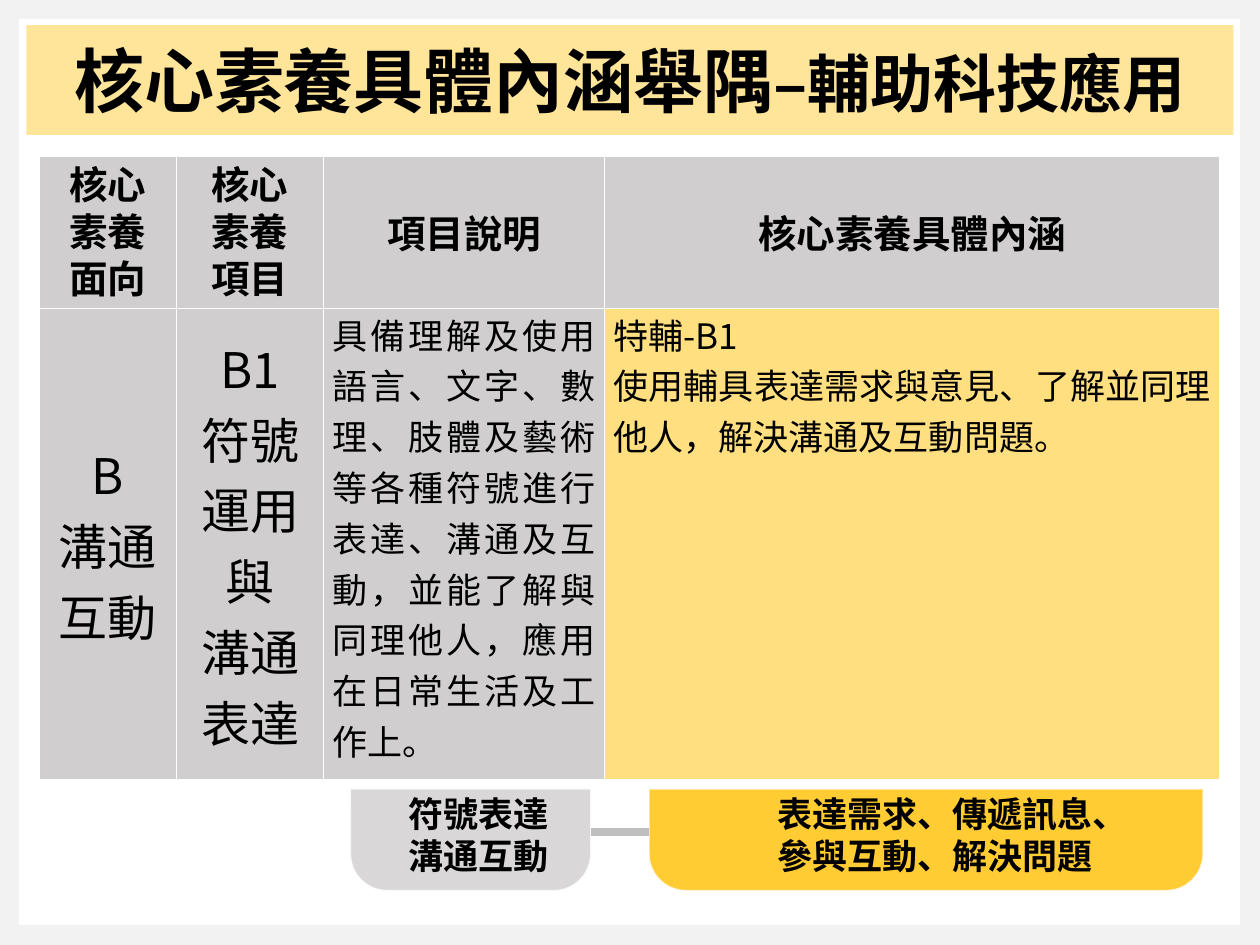
from pptx import Presentation
from pptx.dml.color import RGBColor as RGB
from pptx.enum.shapes import MSO_CONNECTOR as Link, MSO_SHAPE as Form
from pptx.enum.text import MSO_ANCHOR as Anchor, MSO_AUTO_SIZE as Fit, PP_ALIGN as Align
from pptx.oxml.ns import qn
from pptx.util import Inches, Pt
from lxml.etree import SubElement as Sub

WHITE = RGB(0xFF, 0xFF, 0xFF)
BLACK = RGB(0, 0, 0)
PAPER = RGB(0xF2, 0xF2, 0xF2)
GREY = RGB(0xD0, 0xCE, 0xCE)
ROD = RGB(0xBF, 0xBF, 0xBF)
GOLD = RGB(0xFF, 0xC0, 0x00)
SC, TC = "Noto Sans CJK SC", "Noto Sans CJK TC"

WIDE, HIGH = Inches(10), Inches(7.5)
UNIT = WIDE // 100
SIDES = ("left", "top", "width", "height")
MID = {"vertical_anchor": Anchor.MIDDLE}
TOP = {"vertical_anchor": Anchor.TOP}
HEAD = {"size": Pt(22), "bold": True, "name": TC}
LARGE = {"size": Pt(28), "bold": False, "name": TC}
BODY = {"size": Pt(20), "bold": False, "name": TC}
TAG = {"size": Pt(20), "bold": True, "name": SC}


def span(*cols):
    return [round(c * UNIT) for c in cols]


def apply(item, form):
    for key, val in form.items():
        setattr(item, key, val)


def pad(side, rise):
    wide, tall = span(side, rise)
    return {"margin_left": wide, "margin_right": wide,
            "margin_top": tall, "margin_bottom": tall}


def paint(fill, tone, alpha=100):
    fill.solid()
    fill.fore_color.rgb = tone
    return alpha


def fade(root, alpha):
    for tint in root.iter(qn("a:srgbClr")):
        Sub(tint, qn("a:alpha"), val=str(alpha * 1000))


def write(para, text, font):
    run = para.add_run()
    run.text = text
    apply(run.font, font)
    run.font.color.rgb = BLACK
    Sub(run.font._element, qn("a:ea"), typeface=font["name"])


def fill_text(frame, lines, font, form):
    for i, line in enumerate(lines):
        para = frame.add_paragraph() if i else frame.paragraphs[0]
        apply(para, form)
        write(para, line, font)


def add_title(slide, box):
    title = slide.shapes.title
    apply(title, dict(zip(SIDES, span(*box))))
    paint(title.fill, GOLD)
    fade(title.element.spPr, 40)
    frame = title.text_frame
    apply(frame, {**MID, "word_wrap": True, "auto_size": Fit.NONE})
    para = frame.paragraphs[0]
    para.alignment = Align.CENTER
    for text, size in (("核心素養具體內涵舉隅", 40), ("–輔助科技應用", 36)):
        write(para, text, {"size": Pt(size), "bold": True, "name": SC})


def add_panel(slide, box):
    panel = slide.shapes.add_shape(Form.RECTANGLE, *span(*box))
    panel.shadow.inherit = False
    paint(panel.fill, WHITE)
    panel.line.fill.background()
    slide.shapes.title.element.addprevious(panel.element)


def edge(cell):
    props = cell._tc.get_or_add_tcPr()
    for i, side in enumerate(("lnL", "lnR", "lnT", "lnB")):
        line = props.makeelement(qn("a:" + side), {"w": str(Pt(1))})
        Sub(Sub(line, qn("a:solidFill")), qn("a:srgbClr"), val=str(WHITE))
        props.insert(i, line)


def add_grid(slide, box):
    cols, rows = (10.9, 11.7, 22.3, 48.8), (11, 37.4)
    tight = {"alignment": Align.CENTER, "line_spacing": 0.85}
    mid = {"alignment": Align.CENTER}
    just = {"alignment": Align.JUSTIFY}
    head, slim = {**MID, **pad(1, 0.4)}, pad(0.7, 0)
    cells = (
        (
            (("核心素養", "面向"), HEAD, tight, head),
            (("核心", "素養", "項目"), HEAD, tight, head),
            (("項目說明",), HEAD, mid, head),
            (("核心素養具體內涵",), HEAD, mid, head),
        ),
        (
            (("B", "溝通互動"), LARGE, mid, MID),
            (("B1", "符號運用與", "溝通表達"), LARGE, mid, {**MID, **slim}),
            (("具備理解及使用語言、文字、數理、肢體及藝術等各種符號進行表達、溝通及互動，"
              "並能了解與同理他人，應用在日常生活及工作上。",), BODY, just, {**TOP, **slim}),
            (("特輔-B1", "使用輔具表達需求與意見、了解並同理他人，解決溝通及互動問題。"),
             BODY, just, {**TOP, **slim}),
        ),
    )
    table = slide.shapes.add_table(len(rows), len(cols), *span(*box)).table
    for col, wide in zip(table.columns, span(*cols)):
        col.width = wide
    for row, tall in zip(table.rows, span(*rows)):
        row.height = tall
    for r, line in enumerate(cells):
        for c, (text, font, form, look) in enumerate(line):
            cell = table.cell(r, c)
            apply(cell, look)
            fill_text(cell.text_frame, text, font, form)
            gold = (r, c) == (1, 3)
            paint(cell.fill, GOLD if gold else GREY)
            if gold:
                fade(cell._tc.tcPr, 50)
            edge(cell)


def add_tag(slide, box, tone, lines, dent):
    tag = slide.shapes.add_shape(Form.ROUND_2_SAME_RECTANGLE, *span(*box))
    tag.shadow.inherit = False
    tag.adjustments[0], tag.adjustments[1] = 0, 0.363
    paint(tag.fill, tone)
    paint(tag.line.fill, WHITE)
    tag.line.width = Pt(1)
    fade(tag.element.spPr, 80)
    frame = tag.text_frame
    apply(frame, {**MID, "word_wrap": True,
                  "margin_left": Inches(0.1) + dent * TAG["size"]})
    fill_text(frame, lines, TAG, {"alignment": Align.LEFT})


def add_foot(slide, box):
    left, top, wide, tall = box
    first, gap = 19.1, 4.6
    start = left + first
    end = start + gap
    add_tag(slide, (left, top, first, tall), GREY, ("符號表達", "溝通互動"), 1)
    add_tag(slide, (end, top, wide - first - gap, tall), GOLD,
            ("表達需求、傳遞訊息、", "參與互動、解決問題"), 3)
    level = top + tall * 0.42
    rod = slide.shapes.add_connector(
        Link.STRAIGHT, *span(start, level, end, level))
    paint(rod.line.fill, ROD)
    rod.line.width = Pt(4.5)
    Sub(rod.element.spPr, qn("a:effectLst"))


def main():
    deck = Presentation()
    deck.slide_width, deck.slide_height = WIDE, HIGH
    slide = deck.slides.add_slide(deck.slide_layouts[5])
    paint(slide.background.fill, PAPER)
    add_title(slide, (2.1, 2, 95.8, 8.7))
    add_panel(slide, (1.5, 1.5, 96.9, 71.9))
    add_grid(slide, (3.1, 12.4, 93.7, 48.4))
    add_foot(slide, (27.8, 62.6, 67.7, 8.1))
    deck.save("out.pptx")


if __name__ == "__main__":
    main()
